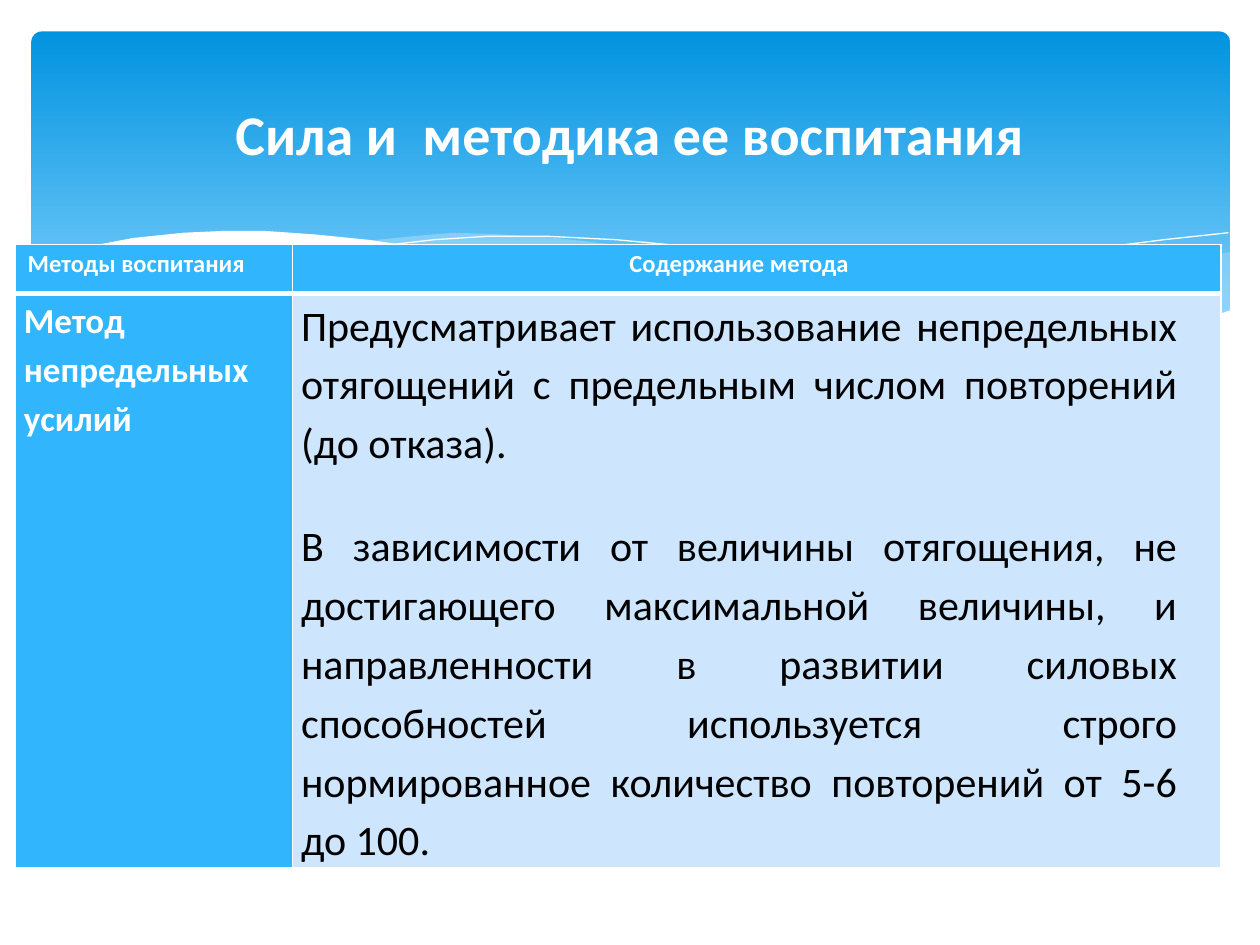
from dataclasses import dataclass

from lxml import etree
from pptx import Presentation
from pptx.dml.color import RGBColor
from pptx.enum.shapes import MSO_SHAPE
from pptx.enum.text import MSO_ANCHOR, PP_ALIGN
from pptx.oxml.ns import qn
from pptx.util import Pt

CENTER, JUSTIFY = PP_ALIGN.CENTER, PP_ALIGN.JUSTIFY
MIDDLE, TOP = MSO_ANCHOR.MIDDLE, MSO_ANCHOR.TOP
ROUNDED_RECTANGLE = MSO_SHAPE.ROUNDED_RECTANGLE
TITLE_ONLY_LAYOUT = 5


@dataclass(frozen=True)
class Theme:
    font: str = "Calibri"
    white: str = "FFFFFF"
    black: str = "000000"
    banner_top: str = "0293E0"
    banner_bottom: str = "83D3FE"
    ribbon: str = "C6E7FC"
    accent: str = "31B6FD"
    pale: str = "CEE5FE"
    title_size: int = 32
    header_size: int = 14
    method_size: int = 20
    body_size: int = 24


THEME = Theme()

# Curves are in points, measured from the top left corner of the banner.
RIGHT_RIBBON = [
    (685, 126), (655, 131), (634, 135), (602, 143), (562, 153), (524, 161),
    (490, 167), (458, 173), (490, 177), (527, 181), (560, 182), (597, 181),
    (628, 176), (655, 171), (685, 160),
]
MIDDLE_RIBBON = [
    (625, 179), (585, 173), (540, 165), (490, 155), (435, 142), (402, 134),
    (372, 128), (334, 122), (300, 118), (269, 116), (242, 115), (218, 117),
    (188, 120), (228, 125), (273, 134), (305, 142), (364, 155), (415, 166),
    (461, 174), (502, 179), (547, 182), (593, 181),
]
FALLING_LINE = [
    (204, 122), (230, 119), (261, 117), (294, 117), (334, 119), (366, 122),
    (401, 126), (440, 132), (482, 140), (529, 150), (580, 163), (635, 178),
]
RISING_LINE = [
    (423, 167), (466, 156), (500, 147), (541, 138), (584, 129), (616, 123),
    (647, 119), (684, 115),
]
WHITE_WAVE = [
    (686, 159), (659, 168), (629, 176), (594, 180), (564, 181), (530, 180),
    (492, 176), (449, 171), (399, 162), (344, 150), (304, 140), (264, 131),
    (227, 124), (192, 119), (162, 116), (134, 114), (109, 114), (87, 115),
    (58, 118), (37, 122), (15, 128), (-1, 135), (-1, 219), (686, 219),
]


def color(value):
    return RGBColor.from_string(value)


def write_text(frame, *texts, size, fill=THEME.white, bold=True,
               align=CENTER, line_spacing=1.0, gap=0):
    """Write one paragraph per text, with gap points between paragraphs."""
    frame.word_wrap = True
    for index, text in enumerate(texts):
        paragraph = frame.paragraphs[0] if index == 0 else frame.add_paragraph()
        paragraph.alignment = align
        paragraph.line_spacing = line_spacing
        paragraph.space_before = Pt(gap if index else 0)
        run = paragraph.add_run()
        run.text = text
        run.font.name = THEME.font
        run.font.size = Pt(size)
        run.font.bold = bold
        run.font.color.rgb = color(fill)


def add_curve(slide, origin, points, fill=None, opacity=100, line=None):
    """Draw a filled shape, or an open line when no fill is given."""
    left, top = origin
    moved = [(left + x, top + y) for x, y in points]
    builder = slide.shapes.build_freeform(*moved[0], scale=Pt(1))
    builder.add_line_segments(moved[1:], close=fill is not None)
    shape = builder.convert_to_shape()
    shape.shadow.inherit = False
    if fill:
        shape.fill.solid()
        shape.fill.fore_color.rgb = color(fill)
        value = shape.element.spPr.find(".//" + qn("a:srgbClr"))
        etree.SubElement(value, qn("a:alpha"), val=str(opacity * 1000))
    else:
        shape.fill.background()
    if line:
        shape.line.color.rgb = color(line)
        shape.line.width = Pt(0)
    else:
        shape.line.fill.background()


def add_banner(slide, left, top, width, height):
    banner = slide.shapes.add_shape(
        ROUNDED_RECTANGLE, Pt(left), Pt(top), Pt(width), Pt(height))
    banner.adjustments[0] = 0.03
    banner.shadow.inherit = False
    banner.line.fill.background()
    banner.fill.gradient()
    banner.fill.gradient_angle = 270
    stops = [(0, THEME.banner_top), (0.9, THEME.banner_bottom)]
    for stop, (position, value) in zip(banner.fill.gradient_stops, stops):
        stop.position = position
        stop.color.rgb = color(value)

    origin = (left, top)
    add_curve(slide, origin, RIGHT_RIBBON, fill=THEME.ribbon, opacity=29)
    add_curve(slide, origin, MIDDLE_RIBBON, fill=THEME.ribbon, opacity=40)
    add_curve(slide, origin, FALLING_LINE, line=THEME.white)
    add_curve(slide, origin, RISING_LINE, line=THEME.white)
    add_curve(slide, origin, WHITE_WAVE, fill=THEME.white)


def set_borders(cell, **widths):
    """Add white borders; widths are in points, keyed by border tag."""
    properties = cell._tc.get_or_add_tcPr()
    for index, (tag, width) in enumerate(widths.items()):
        border = etree.Element(qn(f"a:{tag}"), w=str(Pt(width)))
        solid = etree.SubElement(border, qn("a:solidFill"))
        etree.SubElement(solid, qn("a:srgbClr"), val=THEME.white)
        properties.insert(index, border)


def add_methods_table(slide, left, top, width, height):
    method_width, header_height = 158.4, 28.08
    table = slide.shapes.add_table(
        2, 2, Pt(left), Pt(top), Pt(width), Pt(height)).table
    table.columns[0].width = Pt(method_width)
    table.columns[1].width = Pt(width - method_width)
    table.rows[0].height = Pt(header_height)
    table.rows[1].height = Pt(height - header_height)

    header = dict(size=THEME.header_size)
    method = dict(size=THEME.method_size, align=JUSTIFY)
    content = dict(size=THEME.body_size, fill=THEME.black, bold=False,
                   align=JUSTIFY, gap=25)
    cells = [
        (0, 0, THEME.accent, header, ["Методы воспитания"]),
        (0, 1, THEME.accent, header, ["Содержание метода"]),
        (1, 0, THEME.accent, method, ["Метод непредельных усилий"]),
        (1, 1, THEME.pale, content, [
            "Предусматривает использование непредельных отягощений "
            "с предельным числом повторений (до отказа).",
            "В зависимости от величины отягощения, не достигающего "
            "максимальной величины, и направленности в развитии силовых "
            "способностей используется строго нормированное количество "
            "повторений от 5-6 до 100.",
        ]),
    ]
    for row, column, fill, style, texts in cells:
        cell = table.cell(row, column)
        cell.margin_left, cell.margin_right = Pt(5), Pt(25)
        cell.margin_top = cell.margin_bottom = Pt(0)
        cell.vertical_anchor = TOP
        cell.fill.solid()
        cell.fill.fore_color.rgb = color(fill)
        set_borders(cell, lnL=1, lnR=1, lnT=1 if row == 0 else 3,
                    lnB=3 if row == 0 else 1)
        write_text(cell.text_frame, *texts, line_spacing=1.15, **style)


def place_title(slide, left, top, width, height):
    title = slide.shapes.title
    title.left, title.top = Pt(left), Pt(top)
    title.width, title.height = Pt(width), Pt(height)
    title.text_frame.vertical_anchor = MIDDLE
    write_text(title.text_frame, "Сила и  методика ее воспитания",
               size=THEME.title_size)
    slide.shapes.element.append(title.element)  # bring to the front


def main():
    presentation = Presentation()
    presentation.slide_width, presentation.slide_height = Pt(720), Pt(540)
    slide = presentation.slides.add_slide(
        presentation.slide_layouts[TITLE_ONLY_LAYOUT])
    add_banner(slide, 18, 18, 684.72, 194.4)
    add_methods_table(slide, 8.64, 139.68, 689.04, 355)
    place_title(slide, 36, 26.64, 648, 98.64)
    presentation.save("out.pptx")


if __name__ == "__main__":
    main()
